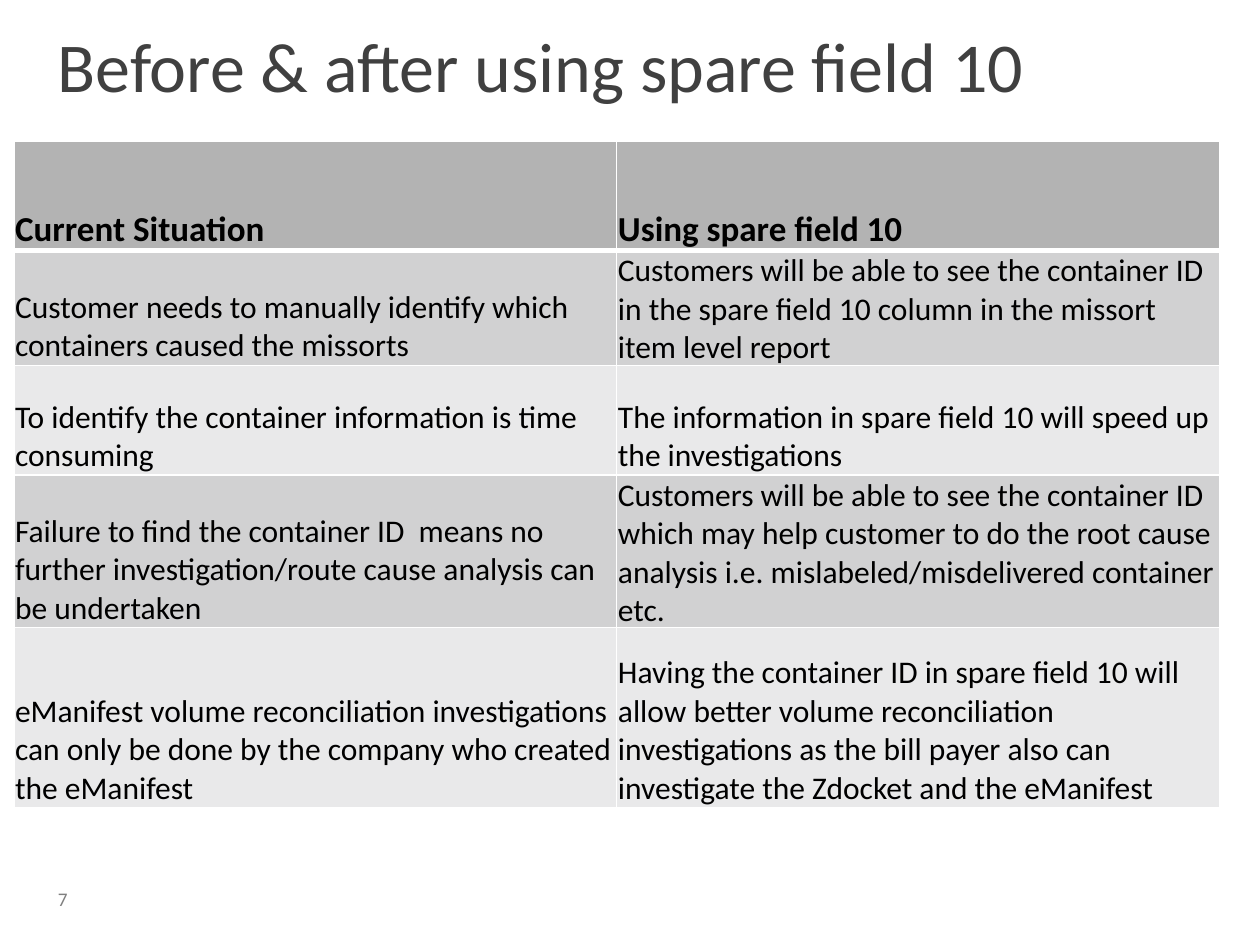
from lxml.etree import SubElement
from pptx import Presentation
from pptx.dml.color import RGBColor
from pptx.enum.text import MSO_ANCHOR
from pptx.oxml.ns import qn
from pptx.util import Inches, Pt

FONT = "Calibri"
WHITE = RGBColor(0xFF, 0xFF, 0xFF)
BLACK = RGBColor(0, 0, 0)
TITLE_GRAY = RGBColor(0x40, 0x40, 0x40)
NUMBER_GRAY = RGBColor(0x80, 0x80, 0x80)
HEADER_FILL = RGBColor(0xB3, 0xB3, 0xB3)
BAND_FILLS = [RGBColor(0xE9, 0xE9, 0xEA), RGBColor(0xD1, 0xD1, 0xD2)]

ROW_HEIGHTS = [0.87, 0.87, 0.87, 1.14, 1.43]
COMPARISON = [
    ("Current Situation", "Using spare field 10"),
    ("Customer needs to manually identify which containers caused the missorts",
     "Customers will be able to see the container ID in the spare field 10 column "
     "in the missort item level report"),
    ("To identify the container information is time consuming",
     "The information in spare field 10 will speed up the investigations"),
    ("Failure to find the container ID  means no further investigation/route cause "
     "analysis can be undertaken",
     "Customers will be able to see the container ID which may help customer to do "
     "the root cause analysis i.e. mislabeled/misdelivered container etc."),
    ("eManifest volume reconciliation investigations can only be done by the company "
     "who created the eManifest",
     "Having the container ID in spare field 10 will allow better volume "
     "reconciliation investigations as the bill payer also can investigate the "
     "Zdocket and the eManifest"),
]


def style_font(font, size, color, bold=False):
    font.name = FONT
    font.size = Pt(size)
    font.bold = bold
    font.color.rgb = color


def add_text(s, left, top, width, height, text, size, color, spacing=1.0):
    tf = s.shapes.add_textbox(left, top, width, height).text_frame
    tf.word_wrap = True
    tf.margin_left = tf.margin_right = tf.margin_top = tf.margin_bottom = 0
    tf.text = text
    p = tf.paragraphs[0]
    p.line_spacing = spacing
    style_font(p.runs[0].font, size, color)


def set_borders(cell, widths):
    tc_pr = cell._tc.get_or_add_tcPr()
    for side, width in zip("LRTB", widths):
        ln = SubElement(tc_pr, qn(f"a:ln{side}"), w=str(Pt(width)))
        fill = SubElement(ln, qn("a:solidFill"))
        SubElement(fill, qn("a:srgbClr"), val=str(WHITE))


def fill_cell(cell, text, row):
    header = row == 0
    cell.margin_left = cell.margin_right = cell.margin_top = Inches(0.01)
    cell.margin_bottom = 0
    cell.vertical_anchor = MSO_ANCHOR.BOTTOM
    set_borders(cell, (1, 1, 3 if row == 1 else 1, 3 if header else 1))
    cell.fill.solid()
    cell.fill.fore_color.rgb = HEADER_FILL if header else BAND_FILLS[row % 2]
    cell.text = text
    r = cell.text_frame.paragraphs[0].runs[0]
    style_font(r.font, 20 if header else 18, BLACK, header)


def add_comparison(s, left, top, width, height):
    table = s.shapes.add_table(len(COMPARISON), 2, left, top, width, height).table
    for row, (texts, row_height) in enumerate(zip(COMPARISON, ROW_HEIGHTS)):
        table.rows[row].height = Inches(row_height)
        for col, text in enumerate(texts):
            fill_cell(table.cell(row, col), text, row)


def build_slide(prs):
    s = prs.slides.add_slide(prs.slide_layouts[6])
    margin = Inches(0.46)
    add_text(s, margin, Inches(0.31), Inches(9.09), Inches(1.08),
             "Before & after using spare field 10", 40, TITLE_GRAY, 0.8)
    add_comparison(s, Inches(0.11), Inches(1.12), Inches(9.57),
                   Inches(sum(ROW_HEIGHTS)))
    add_text(s, margin, Inches(7.04), Inches(1.02), Inches(0.26),
             "7", 11, NUMBER_GRAY)


def main():
    prs = Presentation()
    prs.slide_width = Inches(10)
    prs.slide_height = Inches(7.5)
    build_slide(prs)
    prs.save("out.pptx")


if __name__ == "__main__":
    main()
